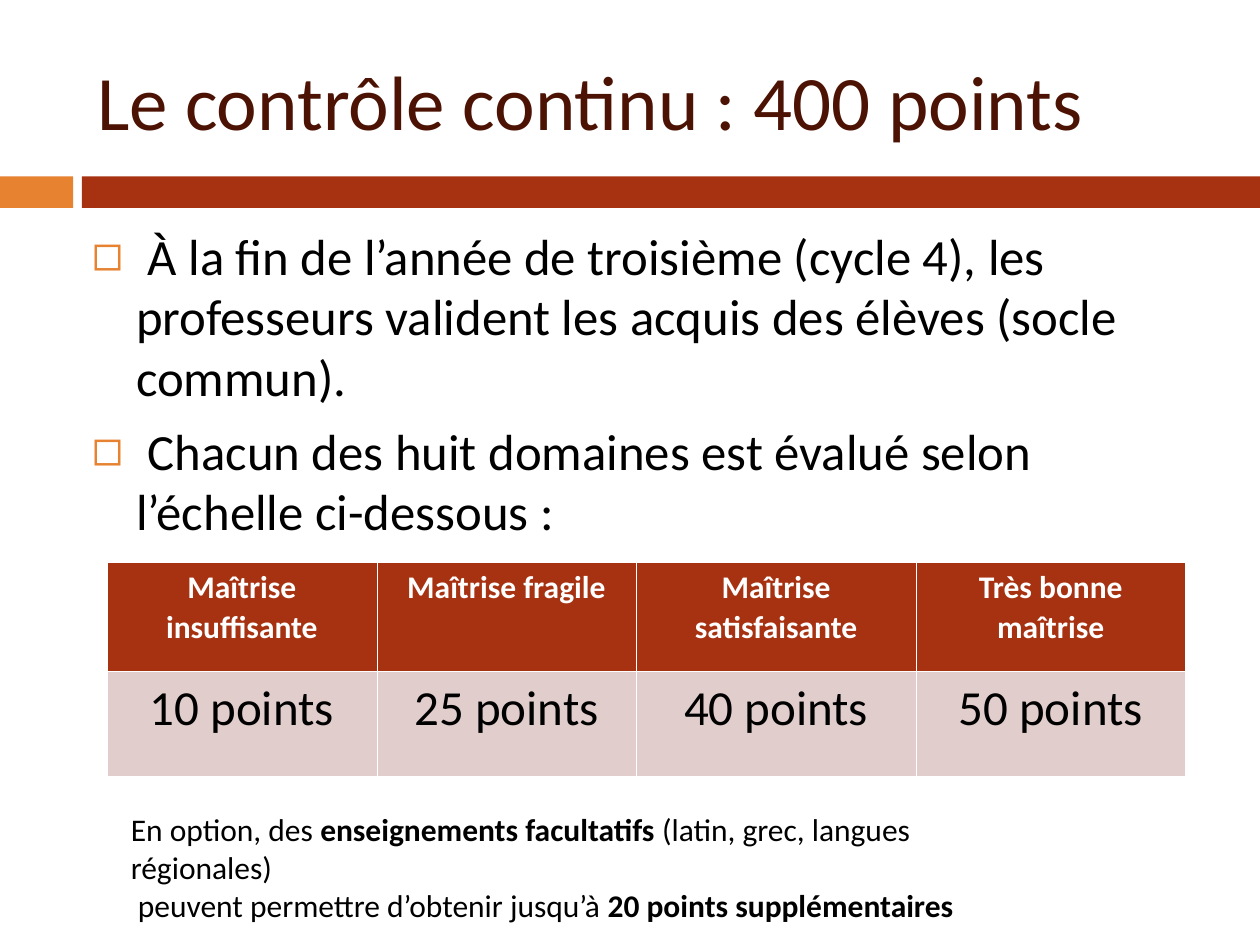
from dataclasses import dataclass

from lxml import etree
from pptx import Presentation
from pptx.dml.color import RGBColor
from pptx.enum.shapes import MSO_SHAPE
from pptx.enum.text import MSO_ANCHOR, MSO_AUTO_SIZE, PP_ALIGN
from pptx.oxml.ns import qn
from pptx.util import Inches, Pt

RECTANGLE = MSO_SHAPE.RECTANGLE
LEFT, CENTER = PP_ALIGN.LEFT, PP_ALIGN.CENTER
TOP, MIDDLE = MSO_ANCHOR.TOP, MSO_ANCHOR.MIDDLE
NO_AUTOFIT = MSO_AUTO_SIZE.NONE


@dataclass(frozen=True)
class Theme:
    font: str = "Calibri"
    orange: str = "E68230"
    red: str = "A63212"
    brown: str = "4C1304"
    pink: str = "E1CDCC"
    black: str = "000000"
    white: str = "FFFFFF"
    title_size: int = 44
    body_size: int = 29
    points_size: int = 28
    small_size: int = 18


theme = Theme()


def set_font(paragraph, size, color, bold=None):
    paragraph.font.name = theme.font
    paragraph.font.size = Pt(size)
    paragraph.font.color.rgb = RGBColor.from_string(color)
    paragraph.font.bold = bold


def add_border(cell, side, width):
    """Draw a white line on one side of a cell: lnL, lnR, lnT or lnB, called in that order."""
    properties = cell._tc.get_or_add_tcPr()
    line = etree.Element(qn(f"a:{side}"), w=str(Pt(width)))
    fill = etree.SubElement(line, qn("a:solidFill"))
    etree.SubElement(fill, qn("a:srgbClr"), val=theme.white)
    # Border lines must come before the cell's fill
    properties.find(qn("a:solidFill")).addprevious(line)


presentation = Presentation()
presentation.slide_width = Inches(10)
presentation.slide_height = Inches(7.5)
slide = presentation.slides.add_slide(presentation.slide_layouts[1])

# Band under the title
for left, width, color in [(0, 0.58, theme.orange), (0.65, 9.35, theme.red)]:
    bar = slide.shapes.add_shape(
        RECTANGLE, Inches(left), Inches(1.4), Inches(width), Inches(0.25))
    bar.shadow.inherit = False
    bar.fill.solid()
    bar.fill.fore_color.rgb = RGBColor.from_string(color)
    bar.line.fill.background()

# Title
title = slide.shapes.title
title.left, title.top = Inches(0.67), Inches(0.25)
title.width, title.height = Inches(8.91), Inches(1.08)
title.text_frame.text = "Le contrôle continu : 400 points"
title.text_frame.auto_size = NO_AUTOFIT
title.text_frame.vertical_anchor = MIDDLE
title.text_frame.paragraphs[0].alignment = LEFT
set_font(title.text_frame.paragraphs[0], theme.title_size, theme.brown)

# Bulleted list
body = slide.placeholders[1]
body.left, body.top = Inches(0.63), Inches(1.73)
body.width, body.height = Inches(8.91), Inches(5.54)
body.text_frame.text = "\n".join([
    " À la fin de l’année de troisième (cycle 4), les professeurs valident "
    "les acquis des élèves (socle commun).",
    " Chacun des huit domaines est évalué selon l’échelle ci-dessous :",
])
body.text_frame.auto_size = NO_AUTOFIT
body.text_frame.vertical_anchor = TOP
for paragraph in body.text_frame.paragraphs:
    set_font(paragraph, theme.body_size, theme.black)
    paragraph.space_before = Pt(7)
    properties = paragraph._p.get_or_add_pPr()
    properties.set("marL", str(Inches(0.35)))
    properties.set("indent", str(-Inches(0.35)))
    bullet_color = etree.Element(qn("a:buClr"))
    etree.SubElement(bullet_color, qn("a:srgbClr"), val=theme.orange)
    bullet = etree.Element(qn("a:buChar"), char="◻")
    properties.find(qn("a:defRPr")).addprevious(bullet_color)
    bullet_color.addnext(bullet)

# Note on optional subjects
note = slide.shapes.add_textbox(Inches(0.94), Inches(6.38), Inches(7.56), Inches(0.7))
note.text_frame.word_wrap = False
note_lines = [
    [("En option, des ", False), ("enseignements facultatifs", True),
     (" (latin, grec, langues régionales)", False)],
    [(" peuvent permettre d’obtenir jusqu’à ", False),
     ("20 points supplémentaires", True)],
]
note.text_frame.add_paragraph()
for paragraph, runs in zip(note.text_frame.paragraphs, note_lines):
    set_font(paragraph, theme.small_size, theme.black)
    for text, bold in runs:
        run = paragraph.add_run()
        run.text = text
        run.font.bold = bold

# Scale of points
levels = [
    ("Maîtrise insuffisante", "10 points", 2.14),
    ("Maîtrise fragile", "25 points", 2.06),
    ("Maîtrise satisfaisante", "40 points", 2.22),
    ("Très bonne maîtrise", "50 points", 2.14),
]
row_styles = [
    (0.87, theme.red, theme.small_size, theme.white, True),
    (0.83, theme.pink, theme.points_size, theme.black, False),
]
table = slide.shapes.add_table(
    len(row_styles), len(levels),
    Inches(0.85), Inches(4.46), Inches(8.56), Inches(1.7)).table
for column, (_, _, width) in zip(table.columns, levels):
    column.width = Inches(width)
for row_index, (height, fill, size, color, bold) in enumerate(row_styles):
    table.rows[row_index].height = Inches(height)
    top_width, bottom_width = [(0.23, 0.75), (0.75, 0.23)][row_index]
    for column_index, level in enumerate(levels):
        cell = table.cell(row_index, column_index)
        cell.text = level[row_index]
        cell.fill.solid()
        cell.fill.fore_color.rgb = RGBColor.from_string(fill)
        for side, width in [("lnL", 0.23), ("lnR", 0.23),
                            ("lnT", top_width), ("lnB", bottom_width)]:
            add_border(cell, side, width)
        paragraph = cell.text_frame.paragraphs[0]
        paragraph.alignment = CENTER
        paragraph.line_spacing = 1.02
        set_font(paragraph, size, color, bold)

presentation.save("out.pptx")
